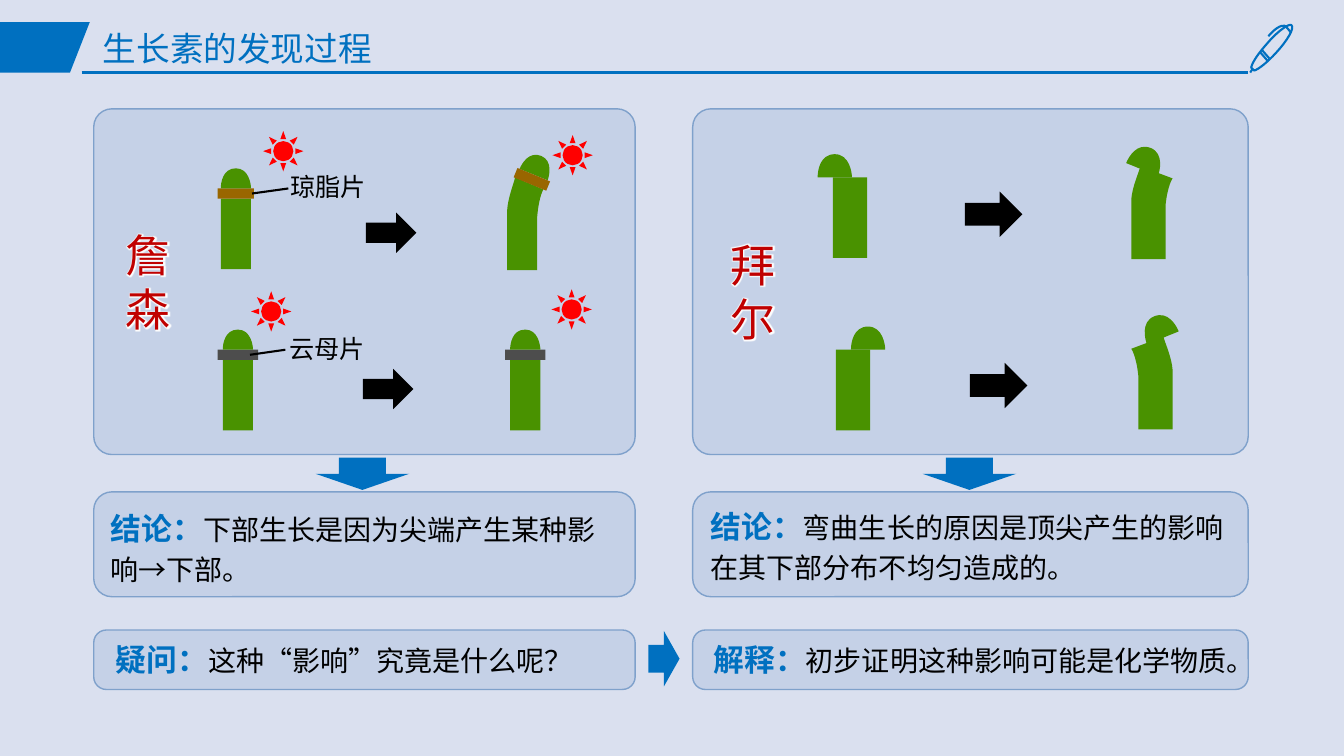
from lxml import etree
from pptx import Presentation
from pptx.dml.color import RGBColor
from pptx.enum.shapes import MSO_CONNECTOR, MSO_SHAPE
from pptx.enum.text import MSO_ANCHOR, MSO_AUTO_SIZE, PP_ALIGN
from pptx.oxml.ns import qn
from pptx.util import Inches, Pt

RECT, ROUND = MSO_SHAPE.RECTANGLE, MSO_SHAPE.ROUNDED_RECTANGLE
RIGHT, DOWN, SUN = MSO_SHAPE.RIGHT_ARROW, MSO_SHAPE.DOWN_ARROW, MSO_SHAPE.SUN
STRAIGHT = MSO_CONNECTOR.STRAIGHT
LEFT, MIDDLE, NO_FIT = PP_ALIGN.LEFT, MSO_ANCHOR.MIDDLE, MSO_AUTO_SIZE.NONE

COLORS = {
    "back": "DAE0EF", "blue": "0070C0", "panel": "4F81BD", "edge": "7FA1CB",
    "green": "499200", "mica": "4D4D4D", "agar": "996600",
    "sun": "FF0000", "name": "C00000", "black": "000000", "white": "FFFFFF",
}
SANS, SERIF = "Arial", "Times New Roman"

# Outlines: a pair is a point, six numbers are a curve (two handles and its end).
TAB = [[(0, 0), (1, 0), (0.78, 1), (0, 1)]]
CAP = [[(1, 1), (0, 1), (0, 0.7, 0.07, 0, 0.5, 0), (0.93, 0, 1, 0.8, 1, 1)]]
BENT = [[(0.83, 1), (0, 1), (0, 0.36), (0.02, 0.22, 0.2, 0.05, 0.22, 0),
         (1, 0.13), (1, 0.13, 0.88, 0.2, 0.83, 0.42)]]
PEN = [
    [(12.57, 0.6), (12.5, 0.52)],
    [(12.52, 0.5), (12.59, 0.58)],
    [(12.81, 0.25), (12.79, 0.23, 12.68, 0.3, 12.57, 0.43),
     (12.48, 0.53, 12.42, 0.62, 12.41, 0.67), (12.44, 0.7),
     (12.48, 0.69, 12.57, 0.62, 12.66, 0.52),
     (12.77, 0.4, 12.84, 0.28, 12.81, 0.25)],
    [(12.42, 0.69), (12.4, 0.72)],
    [(12.8, 0.32), (12.8, 0.32, 12.78, 0.29, 12.75, 0.26),
     (12.75, 0.26, 12.7, 0.22, 12.58, 0.36)],
]


def rgb(name):
    return RGBColor.from_string(COLORS[name])


def paint(item, color):
    item.shadow.inherit = False
    item.fill.solid()
    item.fill.fore_color.rgb = rgb(color)
    item.line.fill.background()


def shape(slide, kind, box, color, turn=0):
    item = slide.shapes.add_shape(kind, *map(Inches, box))
    paint(item, color)
    item.rotation = turn
    return item


def panel(slide, box):
    """Draw a pale see-through box whose corners have one fixed radius."""
    item = shape(slide, ROUND, box, "panel")
    item.adjustments[0] = min(0.18 / box[3], 0.213)
    tint = item.fill._xPr.find(qn("a:solidFill"))[0]
    etree.SubElement(tint, qn("a:alpha"), val="15000")
    item.line.color.rgb = rgb("edge")
    item.line.width = Pt(1)


def line(slide, start, end, color):
    item = slide.shapes.add_connector(STRAIGHT, *map(Inches, start + end))
    item.line.color.rgb = rgb(color)
    item.line.width = Pt(1.5)
    etree.SubElement(item._element.spPr, qn("a:effectLst"))


def bend(item, path):
    """Join the three straight steps of each curve into one curve."""
    steps = item._element.iter(qn("a:lnTo"))
    steps = iter(list(steps))
    for contour in path:
        for part in contour[1:]:
            trio = [next(steps) for _ in range(len(part) // 2)]
            if len(trio) == 3:
                curve = etree.Element(qn("a:cubicBezTo"))
                trio[0].addprevious(curve)
                for step in trio:
                    curve.append(step[0])
                    step.getparent().remove(step)


def outline(slide, path, box, color, turn=0, flip=False, close=True):
    """Draw a path stretched from the unit square to the box."""
    x, y, w, h = box
    build = None
    for contour in path:
        pairs = [part[i:i + 2] for part in contour for i in range(0, len(part), 2)]
        points = [(1000 * (x + w * (1 - px if flip else px)), 1000 * (y + h * py))
                  for px, py in pairs]
        if build is None:
            build = slide.shapes.build_freeform(*points[0], scale=Inches(1) / 1000)
        else:
            build.move_to(*points[0])
        build.add_line_segments(points[1:], close=close)
    item = build.convert_to_shape()
    bend(item, path)
    paint(item, color)
    item.rotation = turn
    return item


def write(para, words, size, color, font=SANS, bold=False):
    run = para.add_run()
    run.text = words
    run.font.size, run.font.name, run.font.bold = Pt(size), font, bold
    run.font.color.rgb = rgb(color)
    return run


def text_box(slide, box):
    frame = slide.shapes.add_textbox(*map(Inches, box)).text_frame
    frame.word_wrap = True
    return frame


def note(slide, box, head, words, space=1.0):
    para = text_box(slide, box).paragraphs[0]
    para.line_spacing = space
    write(para, head, 22, "blue", bold=True)
    write(para, words, 20, "black")


def glow_name(slide, box, lines):
    """Write a name in red with a white glow, one paragraph per line."""
    frame = text_box(slide, box)
    for i, words in enumerate(lines):
        para = frame.add_paragraph() if i else frame.paragraphs[0]
        run = write(para, words, 32, "name", SERIF)
        effect = etree.Element(qn("a:effectLst"))
        glow = etree.SubElement(effect, qn("a:glow"), rad="38100")
        etree.SubElement(glow, qn("a:srgbClr"), val=COLORS["white"])
        run.font._element.find(qn("a:solidFill")).addnext(effect)


def label(slide, box, words, start, end):
    write(text_box(slide, box).paragraphs[0], words, 18, "black")
    line(slide, start, end, "black")


def sprout(slide, x, y, band, width):
    """Draw a straight sprout with a band under its tip."""
    shape(slide, RECT, (x, y, 0.3, 0.7), "green")
    shape(slide, RECT, (x + 0.15 - width / 2, y - 0.1, width, 0.1), band)
    outline(slide, CAP, (x, y - 0.3, 0.3, 0.2), "green")


def shifted(slide, x, y, shift):
    """Draw a cut sprout whose tip sits to one side."""
    shape(slide, RECT, (x, y, 0.34, 0.8), "green")
    outline(slide, CAP, (x + shift, y - 0.23, 0.34, 0.23), "green")


def header(slide):
    back = shape(slide, RECT, (0, 0, 13.33, 7.5), "back")
    slide.shapes.title._element.addprevious(back._element)
    outline(slide, TAB, (0, 0.22, 0.89, 0.5), "blue")
    line(slide, (0.81, 0.72), (12.38, 0.72), "blue")
    pen = outline(slide, PEN, (0, 0, 1, 1), "blue", close=False)
    pen.fill.background()
    pen.line.color.rgb = rgb("blue")
    pen.line.width = Pt(1.5)
    title = slide.shapes.title
    title.left, title.top, title.width, title.height = map(
        Inches, (0.92, 0.21, 11.5, 0.59))
    frame = title.text_frame
    frame.auto_size, frame.vertical_anchor = NO_FIT, MIDDLE
    para = frame.paragraphs[0]
    para.alignment, para.line_spacing = LEFT, 0.9
    write(para, "生长素的发现过程", 24, "blue", SERIF)


def agar_mica(slide):
    glow_name(slide, (1.15, 2.21, 0.59, 1.18), ["詹森"])
    for x, y, band, width in ((2.19, 1.97, "agar", 0.36),
                              (2.21, 3.57, "mica", 0.4), (5.06, 3.57, "mica", 0.4)):
        sprout(slide, x, y, band, width)
    outline(slide, BENT, (5.03, 1.76, 0.36, 0.92), "green")
    outline(slide, CAP, (5.18, 1.54, 0.3, 0.2), "green", 22)
    shape(slide, RECT, (5.1, 1.73, 0.35, 0.1), "agar", 22.4)
    for x, y in ((2.61, 1.3), (5.48, 1.34), (2.49, 2.89), (5.47, 2.87)):
        shape(slide, SUN, (x, y, 0.4, 0.4), "sun")
    for x, y in ((3.63, 2.11), (3.6, 3.66)):
        shape(slide, RIGHT, (x, y, 0.5, 0.4), "black")
    label(slide, (2.78, 1.65, 1.01, 0.4), "琼脂片", (2.5, 1.92), (2.86, 1.87))
    label(slide, (2.77, 3.26, 0.99, 0.4), "云母片", (2.48, 3.52), (2.83, 3.47))


def cut_tips(slide):
    glow_name(slide, (7.15, 2.31, 0.65, 1.18), ["拜", "尔"])
    shifted(slide, 8.26, 1.76, -0.15)
    shifted(slide, 8.29, 3.47, 0.15)
    for y, tip, turn, flip in ((1.65, (11.2, 1.46), 22, False),
                               (3.34, (11.32, 3.13), 338, True)):
        outline(slide, BENT, (11.22, y, 0.41, 0.92), "green", flip=flip)
        outline(slide, CAP, tip + (0.34, 0.23), "green", turn, flip)
    for x, y in ((9.57, 1.9), (9.62, 3.6)):
        shape(slide, RIGHT, (x, y, 0.57, 0.45), "black")


def main():
    deck = Presentation()
    deck.slide_width, deck.slide_height = Inches(13.33), Inches(7.5)
    slide = deck.slides.add_slide(deck.slide_layouts[5])
    header(slide)
    for x, width in ((0.93, 5.37), (6.87, 5.51)):
        for y, height in ((1.08, 3.43), (4.88, 1.04), (6.25, 0.59)):
            panel(slide, (x, y, width, height))
    agar_mica(slide)
    cut_tips(slide)
    note(slide, (1, 4.93, 5.21, 0.92), "结论：",
         "下部生长是因为尖端产生某种影响→下部。", 1.2)
    note(slide, (6.95, 4.91, 5.39, 0.92), "结论：",
         "弯曲生长的原因是顶尖产生的影响在其下部分布不均匀造成的。", 1.2)
    note(slide, (1.05, 6.31, 5.16, 0.47), "疑问：", "这种“影响”究竟是什么呢？")
    note(slide, (6.98, 6.31, 5.6, 0.47), "解释：", "初步证明这种影响可能是化学物质。")
    for x in (3.13, 9.15):
        shape(slide, DOWN, (x, 4.54, 0.93, 0.32), "blue")
    shape(slide, DOWN, (6.31, 6.38, 0.55, 0.31), "blue", 270)
    deck.save("out.pptx")


if __name__ == "__main__":
    main()
